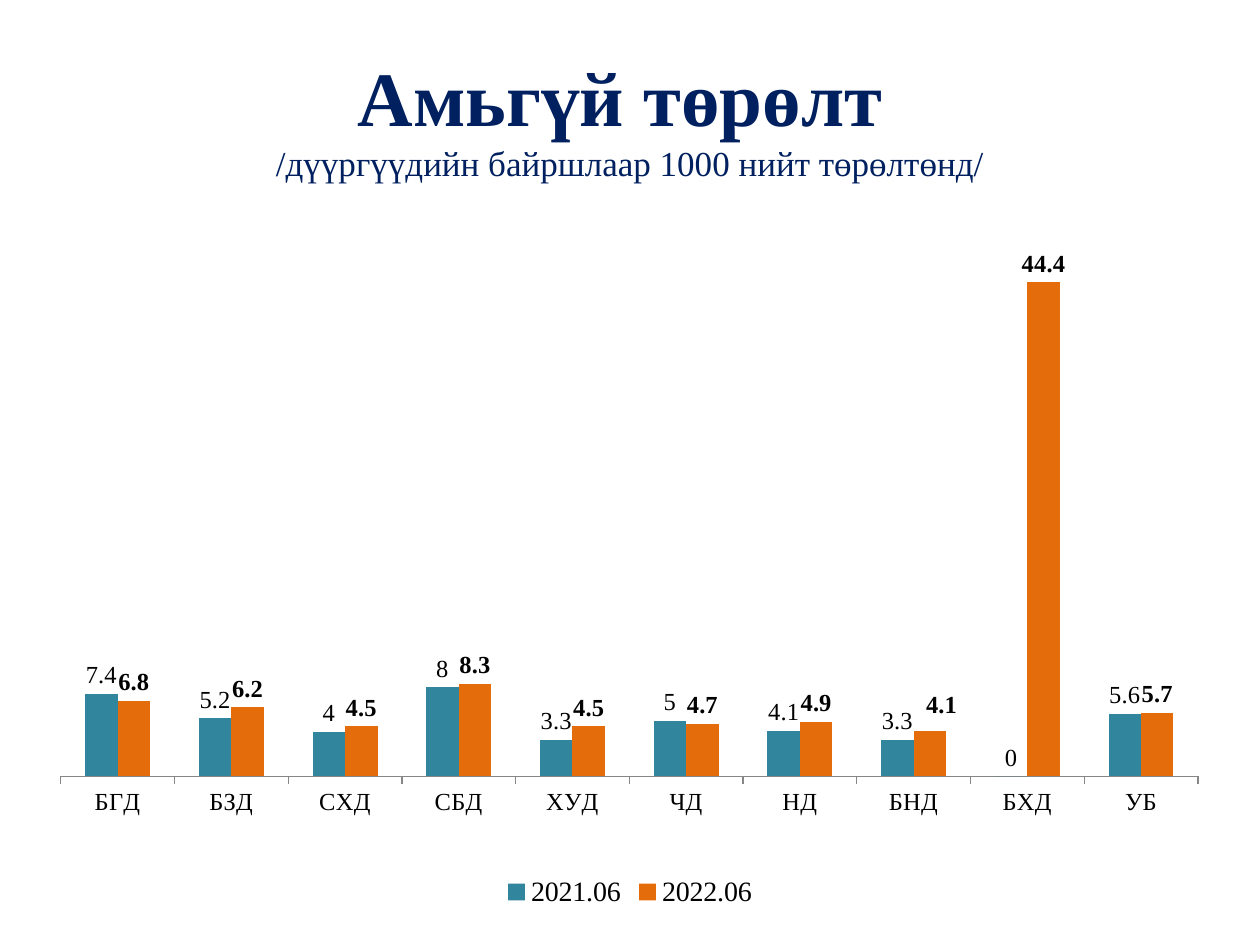
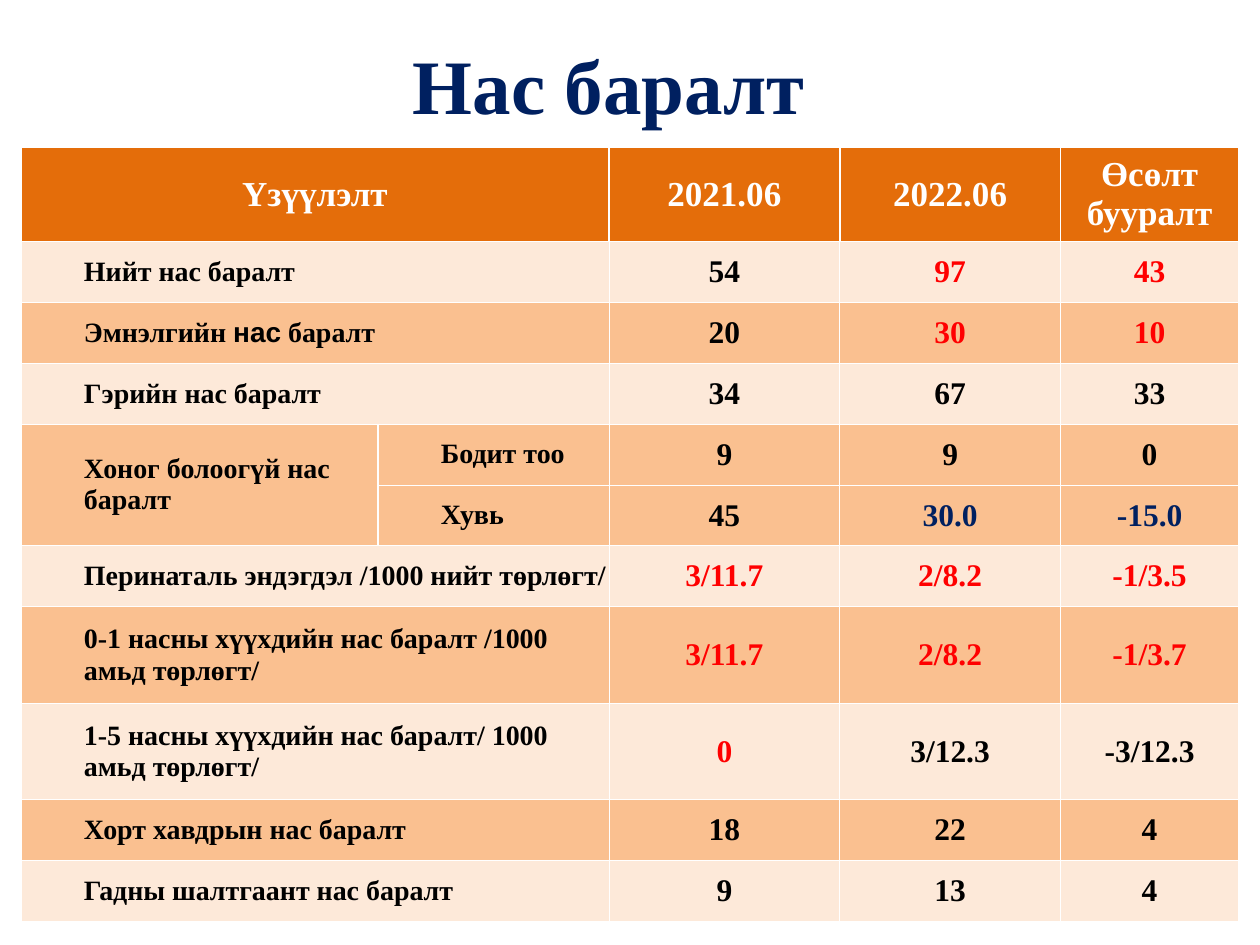
import lxml.etree
import pptx
import pptx.chart.data
import pptx.dml.color
import pptx.enum.chart
import pptx.enum.text
import pptx.oxml.ns
import pptx.util

PX = 7620  # 120 px to the inch
SERIF, SANS = "Times New Roman", "Arial"
NAVY, BLACK, WHITE, RED = "002060", "000000", "FFFFFF", "FF0000"
TEAL, AMBER, GREY = "31859C", "E46C0A", "868686"
HEAD, PALE, PEACH = "E46D0A", "FDE9D9", "FAC090"
YEARS = ["2021.06", "2022.06"]

RATES = {
    "БГД": (7.4, 6.8), "БЗД": (5.2, 6.2), "СХД": (4, 4.5), "СБД": (8, 8.3),
    "ХУД": (3.3, 4.5), "ЧД": (5, 4.7), "НД": (4.1, 4.9), "БНД": (3.3, 4.1),
    "БХД": (0, 44.4), "УБ": (5.6, 5.7),
}

COLS = [340, 220, 220, 210, 170]
ROW, TALL, TOP = 58, 92, 90
INKS = {"k": BLACK, "r": RED, "n": NAVY}
# Label parts (every second one is sans), sub-label, values, inks, fill, height
DEATHS = [
    (["Нийт нас баралт"], "", "54 97 43", "krr", PALE, ROW),
    (["Эмнэлгийн ", "нас", " баралт"], "", "20 30 10", "krr", PEACH, ROW),
    (["Гэрийн нас баралт"], "", "34 67 33", "kkk", PALE, ROW),
    (["Хоног болоогүй нас баралт"], "Бодит тоо", "9 9 0", "kkk", PEACH, ROW),
    ([], "Хувь", "45 30.0 -15.0", "knn", PEACH, ROW),
    (["Перинаталь эндэгдэл /1000 нийт төрлөгт/"], "",
     "3/11.7 2/8.2 -1/3.5", "rrr", PALE, ROW),
    (["0-1 насны хүүхдийн нас баралт /1000 амьд төрлөгт/"], "",
     "3/11.7 2/8.2 -1/3.7", "rrr", PEACH, TALL),
    (["1-5 насны хүүхдийн нас баралт/ 1000 амьд төрлөгт/"], "",
     "0 3/12.3 -3/12.3", "rkk", PALE, TALL),
    (["Хорт хавдрын нас баралт"], "", "18 22 4", "kkk", PEACH, ROW),
    (["Гадны шалтгаант нас баралт"], "", "9 13 4", "kkk", PALE, ROW),
]


def px(num):
    return pptx.util.Emu(num * PX)


def rgb(code):
    return pptx.dml.color.RGBColor.from_string(code)


def style(font, size, color=BLACK, bold=False, face=SERIF):
    font.size = pptx.util.Pt(size)
    font.bold = bold
    font.name = face
    font.color.rgb = rgb(color)


def add_run(para, text, size, color, bold=True, face=SERIF):
    run = para.add_run()
    run.text = text
    style(run.font, size, color, bold, face)


def add_slide(deck, box, title, note=""):
    """Title-only slide; the note goes on a second, lighter line."""
    slide = deck.slides.add_slide(deck.slide_layouts[5])
    shape = slide.shapes.title
    shape.left, shape.top, shape.width, shape.height = map(px, box)
    frame = shape.text_frame
    frame.auto_size = pptx.enum.text.MSO_AUTO_SIZE.NONE
    frame.vertical_anchor = pptx.enum.text.MSO_ANCHOR.MIDDLE
    para = frame.paragraphs[0]
    para.alignment = pptx.enum.text.PP_ALIGN.CENTER
    add_run(para, title, 44, NAVY)
    if note:
        para.add_line_break()
        add_run(para, note, 20, NAVY, bold=False)
    return slide


# Chart

def set_layout(node, index, **vals):
    """Give a chart element a manual layout as its child at index."""
    qn = pptx.oxml.ns.qn
    for old in node.findall(qn("c:layout")):
        node.remove(old)
    layout = lxml.etree.Element(qn("c:layout"))
    manual = lxml.etree.SubElement(layout, qn("c:manualLayout"))
    for tag, val in vals.items():
        lxml.etree.SubElement(manual, qn("c:" + tag)).set("val", str(val))
    node.insert(index, layout)


def add_bars(slide, box):
    data = pptx.chart.data.CategoryChartData()
    data.categories = list(RATES)
    for year, vals in zip(YEARS, zip(*RATES.values())):
        data.add_series(year, vals)
    kind = pptx.enum.chart.XL_CHART_TYPE.COLUMN_CLUSTERED
    chart = slide.shapes.add_chart(kind, *map(px, box), data).chart
    style(chart.font, 14)
    chart.has_title = False
    chart.has_legend = True
    chart.legend.position = pptx.enum.chart.XL_LEGEND_POSITION.BOTTOM
    chart.legend.include_in_layout = False
    style(chart.legend.font, 16)

    axis = chart.category_axis
    axis.major_tick_mark = pptx.enum.chart.XL_TICK_MARK.OUTSIDE
    axis.format.line.color.rgb = rgb(GREY)
    scale = chart.value_axis
    scale.visible = scale.has_major_gridlines = False
    scale.minimum_scale, scale.maximum_scale = 0, 50

    plot = chart.plots[0]
    plot.gap_width, plot.overlap, plot.vary_by_categories = 150, 0, False
    above = pptx.enum.chart.XL_LABEL_POSITION.OUTSIDE_END
    for bars, color, bold in zip(plot.series, (TEAL, AMBER), (False, True)):
        bars.format.fill.solid()
        bars.format.fill.fore_color.rgb = rgb(color)
        tags = bars.data_labels
        tags.show_value = True
        tags.position = above
        style(tags.font, 14, bold=bold)

    # The БНД label sits a little up and to the right
    tag = plot.series[1].points[list(RATES).index("БНД")].data_label
    style(tag.font, 14, bold=True)
    tag.position = above
    node = plot.series[1].data_labels._element.find(pptx.oxml.ns.qn("c:dLbl"))
    set_layout(node, 1, x=0.01, y=-0.01)

    area = chart.element.xpath("c:chart/c:plotArea")[0]
    set_layout(area, 0, layoutTarget="inner", xMode="edge", yMode="edge",
               x=0.016, y=0.029, w=0.967, h=0.779)


# Table

def set_edges(cell, wide):
    """White borders: 1 pt on the named sides, half a point elsewhere."""
    props = cell._tc.get_or_add_tcPr()
    for side in "LRTB":
        line = lxml.etree.SubElement(props, pptx.oxml.ns.qn("a:ln" + side))
        line.set("w", str(pptx.util.Pt(1 if side in wide else 0.5)))
        fill = lxml.etree.SubElement(line, pptx.oxml.ns.qn("a:solidFill"))
        ink = lxml.etree.SubElement(fill, pptx.oxml.ns.qn("a:srgbClr"))
        ink.set("val", WHITE)


def fill_cell(cell, parts, size, color, fill, wide="", label=False):
    set_edges(cell, wide)
    cell.fill.solid()
    cell.fill.fore_color.rgb = rgb(fill)
    cell.margin_left = cell.margin_right = 0
    cell.margin_top = cell.margin_bottom = 0
    cell.vertical_anchor = pptx.enum.text.MSO_ANCHOR.MIDDLE
    para = cell.text_frame.paragraphs[0]
    if label:
        para.level = 1
        props = para._p.get_or_add_pPr()
        props.set("marL", str(px(60)))
        props.set("indent", "0")
    else:
        para.alignment = pptx.enum.text.PP_ALIGN.CENTER
    for num, text in enumerate(parts):
        add_run(para, text, size, color, face=SANS if num % 2 else SERIF)


def add_grid(slide, left, top):
    highs = [TOP] + [row[-1] for row in DEATHS]
    box = (left, top, sum(COLS), sum(highs))
    grid = slide.shapes.add_table(len(highs), len(COLS), *map(px, box)).table
    grid.first_row = grid.horz_banding = False
    for col, wide in zip(grid.columns, COLS):
        col.width = px(wide)
    for row, high in zip(grid.rows, highs):
        row.height = px(high)

    for col, text in enumerate(["Үзүүлэлт", ""] + YEARS + ["Өсөлт бууралт"]):
        fill_cell(grid.cell(0, col), [text] if text else [],
                  20, WHITE, HEAD, "LRT")
    grid.cell(0, 0).merge(grid.cell(0, 1))

    for num, (name, sub, vals, inks, fill, _) in enumerate(DEATHS, 1):
        first, second = grid.cell(num, 0), grid.cell(num, 1)
        fill_cell(first, name, 16, BLACK, fill, "R" if sub else "", True)
        fill_cell(second, [sub] if sub else [], 16, BLACK, fill,
                  "L" if sub else "", True)
        if not sub:
            first.merge(second)
        elif not name:
            grid.cell(num - 1, 0).merge(first)
        for col, (val, ink) in enumerate(zip(vals.split(), inks), 2):
            fill_cell(grid.cell(num, col), [val], 18, INKS[ink], fill)


def main():
    deck = pptx.Presentation()
    deck.slide_width, deck.slide_height = px(1200), px(900)

    # Stillbirths by district
    slide = add_slide(deck, (60, 36, 1080, 150), "Амьгүй төрөлт ",
                      "/дүүргүүдийн байршлаар 1000 нийт төрөлтөнд/")
    add_bars(slide, (40, 190, 1120, 680))

    # Deaths
    slide = add_slide(deck, (90, 30, 980, 100), "Нас баралт")
    add_grid(slide, 20, 140)
    deck.save("out.pptx")


if __name__ == "__main__":
    main()
